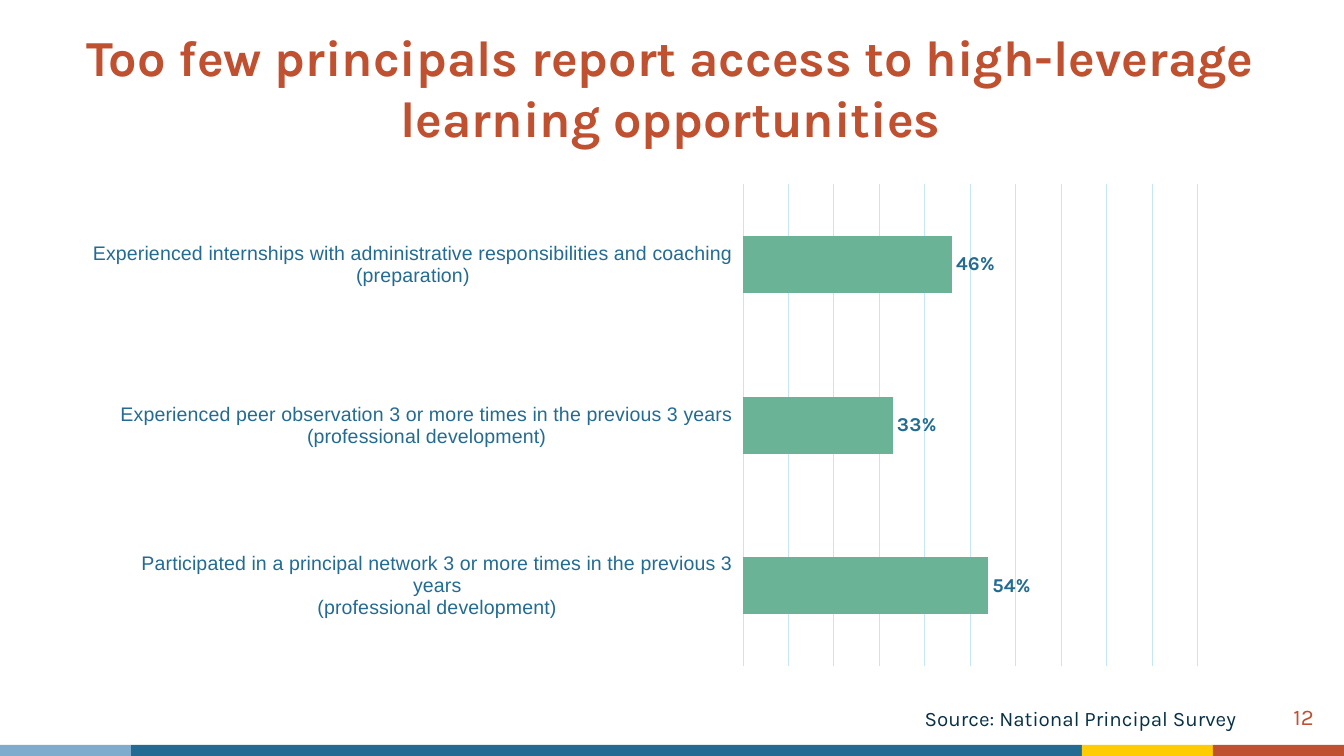
"""Build the slide on principals' access to high-leverage learning."""
from pptx import Presentation
from pptx.chart.data import CategoryChartData
from pptx.dml.color import RGBColor
from pptx.enum.chart import XL_CHART_TYPE as ChartType
from pptx.enum.chart import XL_LABEL_POSITION as LabelPosition
from pptx.enum.chart import XL_TICK_LABEL_POSITION as TickLabels
from pptx.enum.chart import XL_TICK_MARK as TickMark
from pptx.enum.shapes import MSO_SHAPE as Shape
from pptx.enum.text import MSO_ANCHOR as Anchor
from pptx.enum.text import PP_ALIGN as Align
from pptx.util import Inches, Pt

RUST = RGBColor(0xBF, 0x50, 0x30)
YELLOW = RGBColor(0xFF, 0xCB, 0x02)
SKY = RGBColor(0x7F, 0xAC, 0xCC)
BLUE = RGBColor(0x23, 0x6B, 0x92)
NAVY = RGBColor(0x09, 0x31, 0x46)
GREEN = RGBColor(0x6B, 0xB3, 0x96)
GRID = RGBColor(0xC6, 0xE6, 0xF8)


def style_font(font, color, **values):
    font.color.rgb = color
    for name, value in values.items():
        setattr(font, name, value)


def add_text(page, place, text, format_values, inset, color, **font_values):
    box = page.shapes.add_textbox(*map(Inches, place))
    frame = box.text_frame
    frame.word_wrap = True
    frame.vertical_anchor = format_values["anchor"]
    for side, margin in zip(("left", "top", "right", "bottom"), inset):
        setattr(frame, f"margin_{side}", Inches(margin))
    para = frame.paragraphs[0]
    para.alignment = format_values["align"]
    para.line_spacing = format_values["spacing"]
    span = para.add_run()
    span.text = text
    style_font(span.font, color, name="Karla", **font_values)


deck = Presentation()
deck.slide_width, deck.slide_height = Inches(13.33), Inches(7.5)
page = deck.slides.add_slide(deck.slide_layouts[6])

left = 0
for width, color in ((1.3, SKY), (9.43, BLUE), (1.3, YELLOW), (1.3, RUST)):
    band = page.shapes.add_shape(
        Shape.RECTANGLE, Inches(left), Inches(7.39), Inches(width), Inches(0.11))
    band.shadow.inherit = False
    band.fill.solid()
    band.fill.fore_color.rgb = color
    band.line.fill.background()
    left += width

add_text(page, (0.49, 0.33, 12.32, 1.26),
         "Too few principals report access to high-leverage learning opportunities",
         {"anchor": Anchor.BOTTOM, "align": Align.CENTER, "spacing": 1.0},
         (0.13,) * 4, RUST, size=Pt(36), bold=True)
add_text(page, (12.36, 6.85, 0.8, 0.46), "12",
         {"anchor": Anchor.TOP, "align": Align.RIGHT, "spacing": 1.0},
         (0.13,) * 4, RUST, size=Pt(16))
add_text(page, (4.59, 6.93, 7.77, 0.46), "Source: National Principal Survey",
         {"anchor": Anchor.TOP, "align": Align.RIGHT, "spacing": 1.1},
         (0.1, 0.05, 0.1, 0.05), NAVY, size=Pt(14.7))

shares = CategoryChartData(number_format="0%")
shares.categories = [
    "Participated in a principal network 3 or more times in the previous 3 years\n"
    "(professional development)",
    "Experienced peer observation 3 or more times in the previous 3 years\n"
    "(professional development)",
    "Experienced internships with administrative responsibilities and coaching\n"
    "(preparation)",
]
shares.add_series("Series 1", (0.54, 0.33, 0.46))
chart = page.shapes.add_chart(
    ChartType.BAR_CLUSTERED, Inches(0.92), Inches(1.73),
    Inches(11.18), Inches(4.98), shares).chart
chart.has_legend = False
chart.has_title = False
style_font(chart.font, NAVY, name="Karla", size=Pt(10))

category_axis = chart.category_axis
category_axis.major_tick_mark = TickMark.NONE
category_axis.tick_label_position = TickLabels.LOW
style_font(category_axis.tick_labels.font, BLUE, name="Arial", size=Pt(14))

value_axis = chart.value_axis
value_axis.visible = False
value_axis.minimum_scale, value_axis.maximum_scale = 0, 1
value_axis.major_unit = 0.1
value_axis.has_major_gridlines = True
for line in (category_axis.format.line, value_axis.major_gridlines.format.line):
    line.color.rgb = GRID
    line.width = Pt(0.75)

plot = chart.plots[0]
plot.gap_width = 182
plot.vary_by_categories = False
bars = plot.series[0]
bars.format.fill.solid()
bars.format.fill.fore_color.rgb = GREEN
labels = bars.data_labels
labels.show_value = True
labels.position = LabelPosition.OUTSIDE_END
labels.number_format = "0%"
labels.number_format_is_linked = False
style_font(labels.font, BLUE, name="Karla", size=Pt(14), bold=True)

deck.save("out.pptx")
